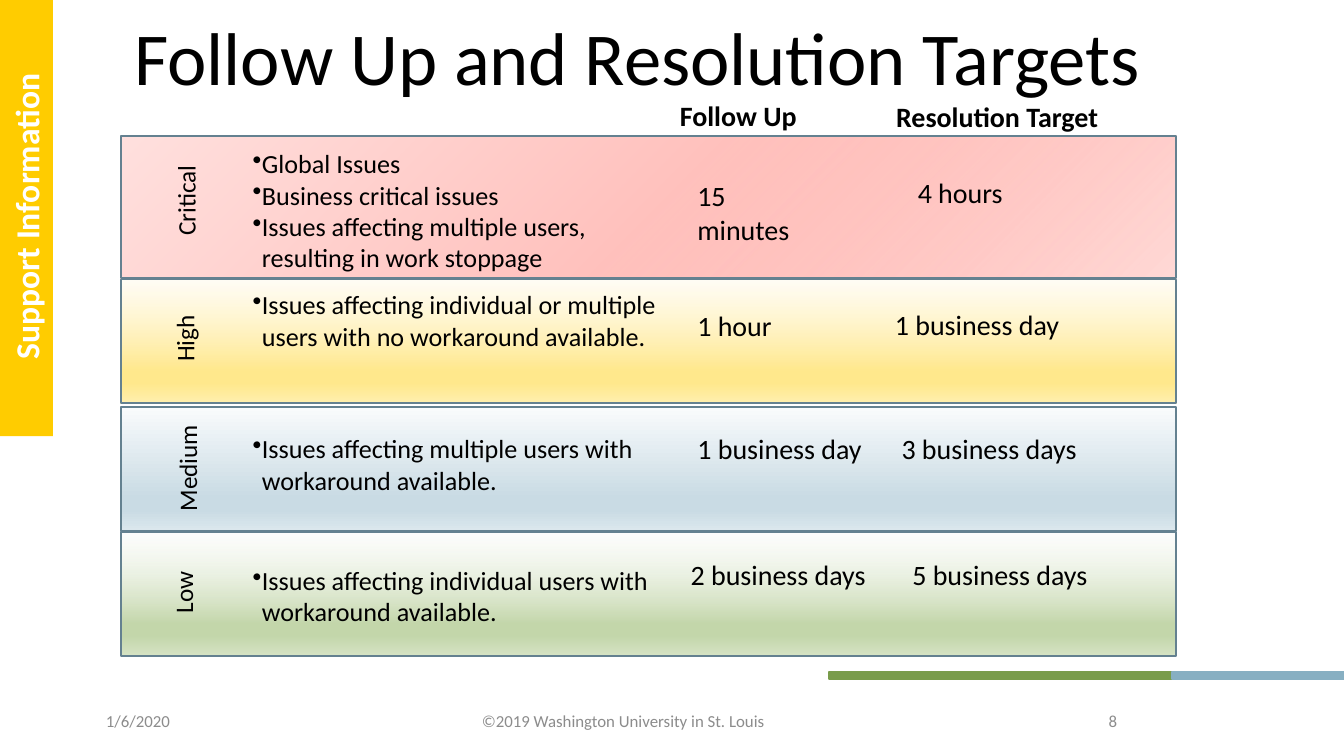
import pptx
import pptx.util
import pptx.dml.color
import pptx.enum.shapes
import pptx.enum.text
import pptx.oxml.ns
from lxml import etree

Pt = pptx.util.Pt
qn = pptx.oxml.ns.qn
ALIGN = pptx.enum.text.PP_ALIGN
ANCHOR = pptx.enum.text.MSO_ANCHOR

THEME = {
    "font": "Calibri",
    "title": 40, "sidebar": 18, "value": 15, "bullet": 14, "label": 13.5, "footer": 9,
    "text": "000000", "muted": "8C8C8C", "white": "FFFFFF",
    "gold": "FFCC00", "green": "799C4B", "blue": "87AFC2", "border": "648190",
    "critical": [(0, "FF9A93", 37), (50, "FFC1BD", 100), (100, "FFE0DE", 100)],
    "high": [(0, "FFFCF2", 68), (74, "FFE88C", 100), (83, "FFE88C", 100), (100, "FFF0B2", 100)],
    "medium": [(0, "F9FBFC", 100), (74, "C9DBE4", 100), (83, "C9DBE4", 100), (100, "DBE7ED", 100)],
    "low": [(0, "F8FAF6", 33), (74, "C3D6AA", 100), (83, "C3D6AA", 100), (100, "D7E4C6", 100)],
}

TITLE = "Follow Up and Resolution Targets"
SIDEBAR = "Support Information"
BAND_LEFT, BAND_WIDTH = 64.8, 565.2
VALUE_HEIGHT = 25.2
BULLET_LEFT = 97.2

PRIORITIES = [
    {"name": "Critical", "band": (72.72, 76.3), "label": (87.84, 75.6, 63.4),
     "issues": ["Global Issues", "Business critical issues",
                "Issues affecting multiple users, resulting in work stoppage"],
     "issue_box": (75.6, 276.5, 74.9),
     "targets": [("15 minutes", 366.5, 92.2, 82.1), ("4 hours", 484.6, 90.7, 82.1)]},
    {"name": "High", "band": (149.76, 66.2), "label": (87.12, 147.6, 67.7),
     "issues": ["Issues affecting individual or multiple users with no workaround available."],
     "issue_box": (151.2, 262.1, 58.3),
     "targets": [("1 hour", 366.5, 162, 82.1), ("1 business day", 472.3, 161.3, 104.4)]},
    {"name": "Medium", "band": (218.16, 66.2), "label": (88.56, 216, 69.8),
     "issues": ["Issues affecting multiple users with workaround available."],
     "issue_box": (228.2, 262.1, 41),
     "targets": [("1 business day", 366.5, 227.5, 104.4), ("3 business days", 475.9, 227.5, 113)]},
    {"name": "Low", "band": (285.12, 66.2), "label": (86.4, 284.4, 66.2),
     "issues": ["Issues affecting individual users with workaround available."],
     "issue_box": (298.8, 262.1, 41),
     "targets": [("2 business days", 362.9, 295.2, 109.4), ("5 business days", 481.7, 295.2, 118.1)]},
]
HEADINGS = [("Follow Up", 357.1, 49, 82.8), ("Resolution Target", 473, 49.7, 124.6)]
FOOTERS = [
    ("1/6/2020", 49.7, 75.6, ALIGN.LEFT),
    ("©2019 Washington University in St. Louis", 150.5, 366.5, ALIGN.CENTER),
    ("8", 540, 65.5, ALIGN.RIGHT),
]
RULES = [("green", 444.2, 183.6), ("blue", 627.8, 92.2)]


def color(name):
    return pptx.dml.color.RGBColor.from_string(THEME[name])


def write(shape, lines, size, ink="text", bold=False, align=ALIGN.LEFT, anchor=ANCHOR.TOP, bullet=False, grow=True):
    frame = shape.text_frame
    frame.word_wrap = True
    frame.vertical_anchor = anchor
    if grow:
        frame.auto_size = pptx.enum.text.MSO_AUTO_SIZE.SHAPE_TO_FIT_TEXT
    frame.text = "\n".join(lines)
    for paragraph in frame.paragraphs:
        paragraph.alignment = align
        if bullet:
            properties = paragraph._p.get_or_add_pPr()
            properties.set("marL", str(Pt(36)))
            properties.set("indent", str(-Pt(5)))
            etree.SubElement(properties, qn("a:buChar"), char="•")
        for run in paragraph.runs:
            run.font.name = THEME["font"]
            run.font.size = Pt(THEME[size])
            run.font.bold = bold
            run.font.color.rgb = color(ink)


def add_text(slide, left, top, width, height, lines, size, **style):
    shape = slide.shapes.add_textbox(Pt(left), Pt(top), Pt(width), Pt(height))
    write(shape, lines, size, **style)
    return shape


def add_rectangle(slide, left, top, width, height):
    kind = pptx.enum.shapes.MSO_SHAPE.RECTANGLE
    shape = slide.shapes.add_shape(kind, Pt(left), Pt(top), Pt(width), Pt(height))
    shape.shadow.inherit = False
    return shape


def outline(shape, name):
    shape.line.color.rgb = color(name)
    shape.line.width = Pt(1)


def fill_gradient(shape, stops, radial):
    shape.fill.gradient()
    gradient = shape._element.spPr.find(qn("a:gradFill"))
    gradient.clear()
    stop_list = etree.SubElement(gradient, qn("a:gsLst"))
    for position, rgb, opacity in stops:
        stop = etree.SubElement(stop_list, qn("a:gs"), pos=str(position * 1000))
        stop_color = etree.SubElement(stop, qn("a:srgbClr"), val=rgb)
        if opacity < 100:
            etree.SubElement(stop_color, qn("a:alpha"), val=str(opacity * 1000))
    if radial:
        circle = etree.SubElement(gradient, qn("a:path"), path="circle")
        etree.SubElement(circle, qn("a:fillToRect"), l="100000", t="100000")
    else:
        etree.SubElement(gradient, qn("a:lin"), ang="5400000", scaled="0")


def add_priority(slide, priority):
    name = priority["name"]
    top, height = priority["band"]
    band = add_rectangle(slide, BAND_LEFT, top, BAND_WIDTH, height)
    fill_gradient(band, THEME[name.lower()], radial=name == "Critical")
    outline(band, "border")

    issue_top, issue_width, issue_height = priority["issue_box"]
    add_text(slide, BULLET_LEFT, issue_top, issue_width, issue_height,
             priority["issues"], "bullet", bullet=True)
    for text, left, target_top, width in priority["targets"]:
        add_text(slide, left, target_top, width, VALUE_HEIGHT, [text], "value")
    label_left, label_top, label_height = priority["label"]
    label = add_text(slide, label_left, label_top, 31, label_height, [name], "label", align=ALIGN.CENTER)
    label.text_frame._txBody.bodyPr.set("vert", "vert270")


def main():
    presentation = pptx.Presentation()
    presentation.slide_width, presentation.slide_height = Pt(720), Pt(405)
    slide = presentation.slides.add_slide(presentation.slide_layouts[6])

    for name, left, width in RULES:
        rule = add_rectangle(slide, left, 360, width, 3.6)
        rule.fill.solid()
        rule.fill.fore_color.rgb = color(name)
        outline(rule, name)

    title = add_text(slide, 64.8, 3.6, 586, 58.3, [TITLE], "title", anchor=ANCHOR.MIDDLE, grow=False)
    title.text_frame.paragraphs[0].line_spacing = 0.9
    for text, left, width, align in FOOTERS:
        add_text(slide, left, 375.1, width, 21.6, [text], "footer", ink="muted",
                 align=align, anchor=ANCHOR.MIDDLE, grow=False)

    sidebar = add_rectangle(slide, -103.7, 101.5, 235.4, 28.8)
    sidebar.rotation = 270
    sidebar.fill.solid()
    sidebar.fill.fore_color.rgb = color("gold")
    sidebar.line.fill.background()
    write(sidebar, [SIDEBAR], "sidebar", ink="white", bold=True, align=ALIGN.CENTER)

    for priority in reversed(PRIORITIES):
        add_priority(slide, priority)
    for text, left, top, width in HEADINGS:
        add_text(slide, left, top, width, VALUE_HEIGHT, [text], "value", bold=True)

    presentation.save("out.pptx")


if __name__ == "__main__":
    main()
